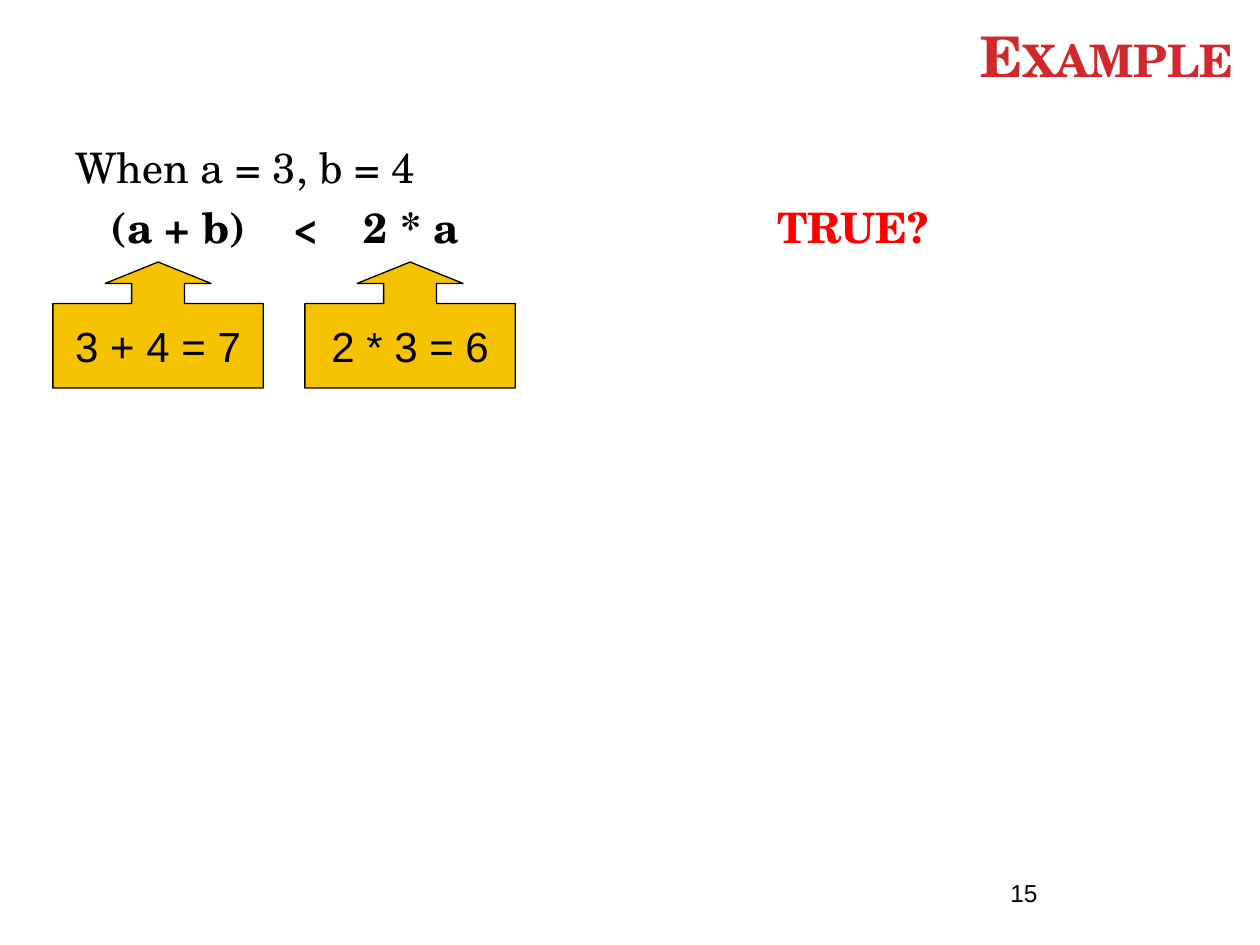
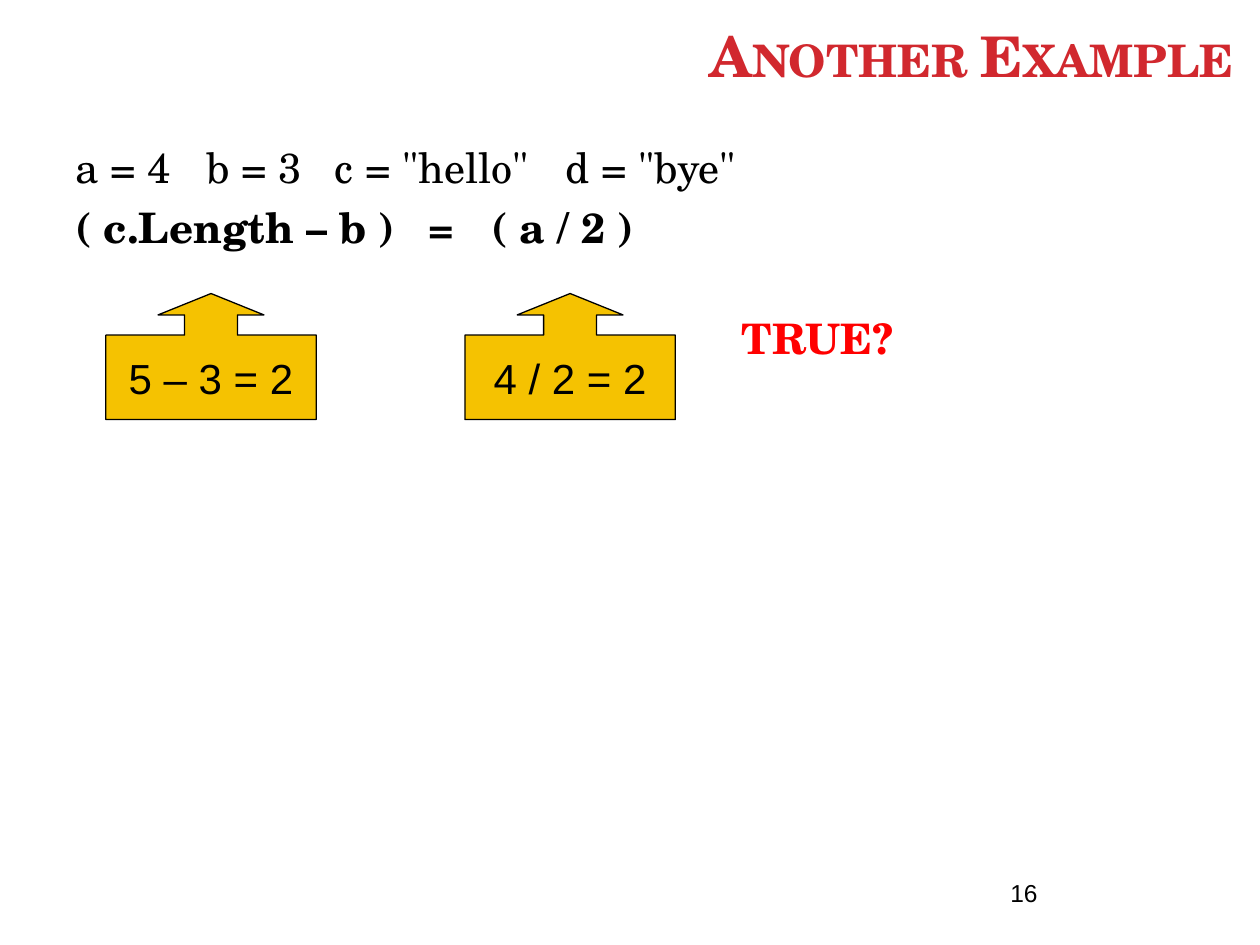
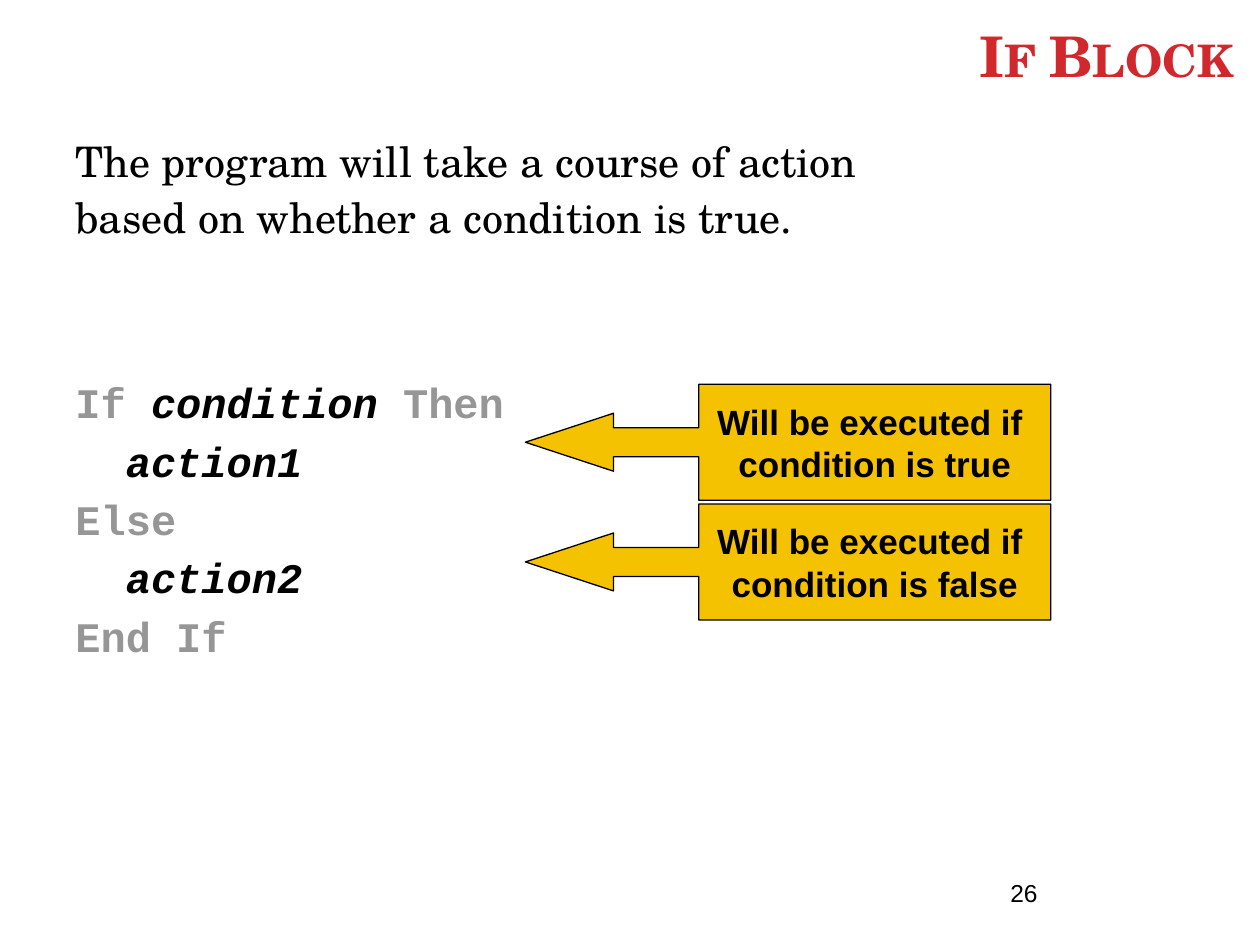
from lxml import etree
from pptx import Presentation
from pptx.dml.color import RGBColor
from pptx.enum.shapes import MSO_SHAPE
from pptx.enum.text import MSO_ANCHOR, PP_ALIGN
from pptx.oxml.ns import qn
from pptx.util import Inches, Pt

UP_CALLOUT = MSO_SHAPE.UP_ARROW_CALLOUT
LEFT_CALLOUT = MSO_SHAPE.LEFT_ARROW_CALLOUT
LEFT, CENTER, RIGHT = PP_ALIGN.LEFT, PP_ALIGN.CENTER, PP_ALIGN.RIGHT
TOP, MIDDLE, BOTTOM = MSO_ANCHOR.TOP, MSO_ANCHOR.MIDDLE, MSO_ANCHOR.BOTTOM

SERIF, SANS, MONO = "TeX Gyre Schola", "Arial", "Courier New"
BLACK, TITLE_RED, ANSWER_RED = "000000", "D1282E", "FF0000"
GOLD, KEYWORD_GRAY = "F5C201", "969696"


def color(value):
    return RGBColor.from_string(value)


def add_text(paragraph, text, size=24, font=SERIF, fill=BLACK,
             bold=False, italic=False, small_caps=False):
    run = paragraph.add_run()
    run.text = text
    run.font.size = Pt(size)
    run.font.name = font
    run.font.bold = bold
    run.font.italic = italic
    run.font.color.rgb = color(fill)
    if small_caps:
        run.font._element.set("cap", "small")


class Deck:
    def __init__(self):
        self.presentation = Presentation()
        self.presentation.slide_width = Inches(10)
        self.presentation.slide_height = Inches(7.5)
        self.slide = None

    def start_slide(self, title, number):
        self.slide = self.presentation.slides.add_slide(self.presentation.slide_layouts[6])
        frame = self.text_box(0.17, 0.14, 9.72, 0.61, BOTTOM)
        paragraph = self.paragraph(frame, alignment=RIGHT)
        add_text(paragraph, title, size=32, fill=TITLE_RED, bold=True, small_caps=True)
        frame = self.text_box(7.92, 6.92, 2.08, 0.5)
        add_text(self.paragraph(frame), str(number), size=14, font=SANS)

    def text_box(self, left, top, width, height, anchor=TOP):
        shape = self.slide.shapes.add_textbox(
            Inches(left), Inches(top), Inches(width), Inches(height))
        frame = shape.text_frame
        frame.word_wrap = True
        frame.vertical_anchor = anchor
        return frame

    def body(self):
        return self.text_box(0.5, 1.07, 8.28, 6.01)

    def paragraph(self, frame, alignment=LEFT, before=0, spacing=1.0, tabs=()):
        first = frame.paragraphs[0]
        paragraph = frame.add_paragraph() if first.runs else first
        paragraph.alignment = alignment
        paragraph.space_before = Pt(before)
        paragraph.line_spacing = spacing
        if tabs:
            properties = paragraph._p.get_or_add_pPr()
            tab_list = etree.SubElement(properties, qn("a:tabLst"))
            for position in tabs:
                etree.SubElement(tab_list, qn("a:tab"), pos=str(Inches(position)), algn="l")
        return paragraph

    def callout(self, kind, left, top, width, height, adjustments, lines, size, bold=False):
        shape = self.slide.shapes.add_shape(
            kind, Inches(left), Inches(top), Inches(width), Inches(height))
        shape.shadow.inherit = False
        shape.fill.solid()
        shape.fill.fore_color.rgb = color(GOLD)
        shape.line.color.rgb = color(BLACK)
        shape.line.width = Pt(0.75)
        for index, value in enumerate(adjustments):
            shape.adjustments[index] = value
        frame = shape.text_frame
        frame.word_wrap = False
        frame.vertical_anchor = MIDDLE
        for line in lines:
            paragraph = self.paragraph(frame, alignment=CENTER)
            add_text(paragraph, line, size=size, font=SANS, bold=bold)

    def value_callout(self, left, top, text):
        self.callout(UP_CALLOUT, left, top, 1.67, 1, (0.42, 0.42, 0.17, 0.67), [text], 24)

    def branch_callout(self, top, lines):
        self.callout(LEFT_CALLOUT, 4.17, top, 4.17, 0.92, (0.25, 0.25, 0.76, 0.67),
                     lines, 20, bold=True)


def build_example(deck):
    deck.start_slide("Example", 15)
    body = deck.body()
    add_text(deck.paragraph(body), "When a = 3, b = 4")
    comparison = deck.paragraph(body, before=6, tabs=(0.28, 1.73, 2.29, 5.57))
    add_text(comparison, "\t(a + b)\t<\t2 * a\t", bold=True)
    add_text(comparison, "TRUE?", fill=ANSWER_RED, bold=True)
    for left, text in ((0.42, "3 + 4 = 7"), (2.42, "2 * 3 = 6")):
        deck.value_callout(left, 2.08, text)


def build_another_example(deck):
    deck.start_slide("Another Example", 16)
    body = deck.body()
    values = deck.paragraph(body, tabs=(1.04, 2.06, 3.89))
    add_text(values, 'a = 4\tb = 3\tc = "hello"\td = "bye"')
    comparison = deck.paragraph(body, before=6, tabs=(2.8, 3.3))
    add_text(comparison, "( c.Length – b )\t=\t( a / 2 )", bold=True)
    answer = deck.paragraph(body, before=34.5, tabs=(5.29,))
    add_text(answer, "\tTRUE?", fill=ANSWER_RED, bold=True)
    for left, text in ((0.84, "5 – 3 = 2"), (3.69, "4 / 2 = 2")):
        deck.value_callout(left, 2.33, text)


def build_if_block(deck):
    deck.start_slide("If Block", 26)
    body = deck.body()
    sentence = ("The program will take a course of action",
                "based on whether a condition is true.")
    for index, text in enumerate(sentence):
        add_text(deck.paragraph(body, before=6 * index, spacing=0.9), text)
    code_lines = (
        (("If ", False), ("condition ", True), ("Then", False)),
        (("  action1", True),),
        (("Else", False),),
        (("  action2", True),),
        (("End If", False),),
    )
    for index, parts in enumerate(code_lines):
        paragraph = deck.paragraph(body, before=7.5 if index else 80, spacing=0.9)
        for text, variable in parts:
            add_text(paragraph, text, font=MONO, bold=True, italic=variable,
                     fill=BLACK if variable else KEYWORD_GRAY)
    for top, outcome in ((3.05, "true"), (4, "false")):
        deck.branch_callout(top, ("Will be executed if ", f"condition is {outcome}"))


def main():
    deck = Deck()
    build_example(deck)
    build_another_example(deck)
    build_if_block(deck)
    deck.presentation.save("out.pptx")


if __name__ == "__main__":
    main()
